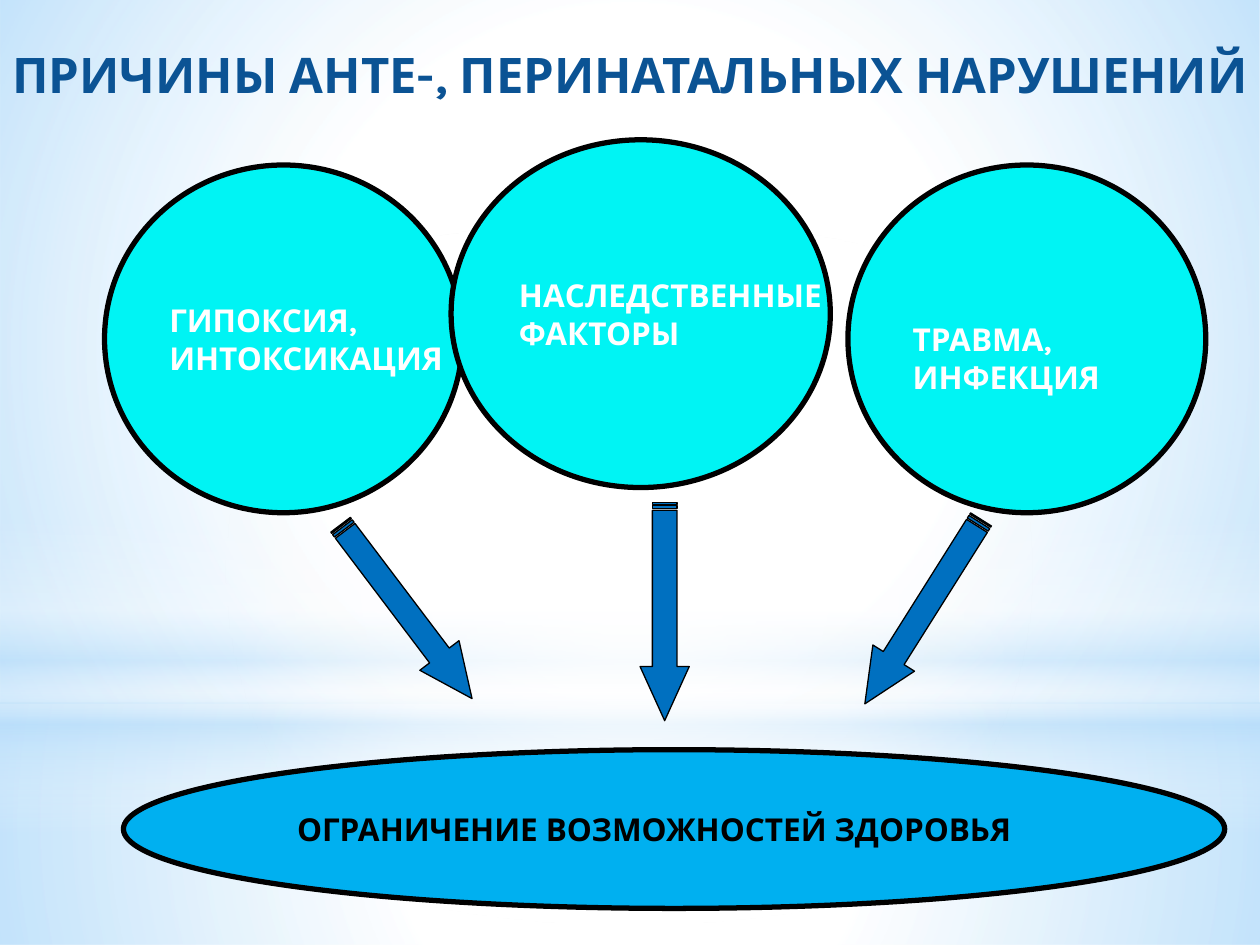
from lxml import etree
from pptx import Presentation
from pptx.dml.color import RGBColor
from pptx.enum.shapes import MSO_SHAPE as SHAPE
from pptx.enum.text import MSO_ANCHOR as ANCHOR, MSO_AUTO_SIZE as AUTO, PP_ALIGN as ALIGN
from pptx.oxml.ns import qn
from pptx.util import Inches, Pt

FONT = "Karla"
WHITE, SKY = "FFFFFF", "B4DCFA"
CYAN, AZURE, BLUE, NAVY, BLACK = "00F4F4", "00B0F0", "0070C0", "0B5394", "000000"

TITLE = "ПРИЧИНЫ АНТЕ-, ПЕРИНАТАЛЬНЫХ НАРУШЕНИЙ"
BACKDROP = [
    (SHAPE.RECTANGLE, (0, 5.58, 10, 1.92), True,
     [(0, WHITE, 91), (37, WHITE, 76), (100, SKY, 79)]),
    (SHAPE.RECTANGLE, (0, 0, 10, 5.58), True,
     [(0, WHITE, 89), (48, WHITE, 62), (100, SKY, 79)]),
    (SHAPE.RECTANGLE, (0, 4.12, 10, 2.5), False,
     [(0, WHITE, 0), (29, WHITE, 30), (45, SKY, 40), (55, WHITE, 26), (65, SKY, 60), (100, WHITE, 0)]),
    (SHAPE.OVAL, (0, 1.75, 10, 5.58), True, [(0, WHITE, 100), (56, WHITE, 0)]),
]
OVALS = [
    ("ГИПОКСИЯ,\nИНТОКСИКАЦИЯ", (0.83, 1.31, 2.84, 2.76), CYAN, WHITE, 0.05),
    ("НАСЛЕДСТВЕННЫЕ\nФАКТОРЫ", (3.58, 1.11, 3.01, 2.76), CYAN, WHITE, 0.05),
    ("ТРАВМА,\nИНФЕКЦИЯ", (6.73, 1.31, 2.84, 2.76), CYAN, WHITE, 0.35),
    ("ОГРАНИЧЕНИЕ ВОЗМОЖНОСТЕЙ ЗДОРОВЬЯ", (0.98, 5.95, 8.74, 1.26), AZURE, BLACK, 0.05),
]
ARROWS = [(2.36, 52.9), (6.46, 122.2), (4.41, 90)]
ARROW_TOP, ARROW_LENGTH, ARROW_WIDTH = 4.66, 1.73, 0.39


def rgb(color):
    return RGBColor.from_string(color)


def add_shape(s, kind, box, fill=None, line=None, width=0):
    sp = s.shapes.add_shape(kind, *map(Inches, box))
    sp.shadow.inherit = False
    if fill:
        sp.fill.solid()
        sp.fill.fore_color.rgb = rgb(fill)
    if line:
        sp.line.color.rgb = rgb(line)
        sp.line.width = Pt(width)
    else:
        sp.line.fill.background()
    return sp


def set_gradient(sp, stops, radial):
    grad = etree.Element(qn("a:gradFill"), rotWithShape="1")
    stop_list = etree.SubElement(grad, qn("a:gsLst"))
    for pos, color, alpha in stops:
        gs = etree.SubElement(stop_list, qn("a:gs"), pos=str(pos * 1000))
        clr = etree.SubElement(gs, qn("a:srgbClr"), val=color)
        etree.SubElement(clr, qn("a:alpha"), val=str(alpha * 1000))
    if radial:
        path = etree.SubElement(grad, qn("a:path"), path="circle")
        etree.SubElement(path, qn("a:fillToRect"), dict.fromkeys("ltrb", "50000"))
    else:
        etree.SubElement(grad, qn("a:lin"), ang="5400000", scaled="0")
    sp._element.spPr.find(qn("a:prstGeom")).addnext(grad)


def set_text(sp, text, size, color):
    tf = sp.text_frame
    tf.text = text
    tf.word_wrap = False
    for p in tf.paragraphs:
        p.alignment = ALIGN.LEFT
        for r in p.runs:
            r.font.name, r.font.size, r.font.bold = FONT, Pt(size), True
            r.font.color.rgb = rgb(color)
    return tf


def main():
    """Build the slide on causes of ante- and perinatal disorders."""
    prs = Presentation()
    prs.slide_width, prs.slide_height = Inches(10), Inches(7.5)
    s = prs.slides.add_slide(prs.slide_layouts[6])
    s.background.fill.solid()
    s.background.fill.fore_color.rgb = rgb(WHITE)

    for kind, box, radial, stops in BACKDROP:
        set_gradient(add_shape(s, kind, box), stops, radial)

    title = s.shapes.add_textbox(*map(Inches, (0, 0.3, 10.87, 0.59)))
    set_text(title, TITLE, 28, NAVY).auto_size = AUTO.SHAPE_TO_FIT_TEXT

    for text, box, fill, color, top in OVALS:
        tf = set_text(add_shape(s, SHAPE.OVAL, box, fill, BLACK, 3), text, 18, color)
        tf.vertical_anchor = ANCHOR.MIDDLE
        tf.margin_top = Inches(top)

    for left, angle in ARROWS:
        box = (left, ARROW_TOP, ARROW_LENGTH, ARROW_WIDTH)
        sp = add_shape(s, SHAPE.STRIPED_RIGHT_ARROW, box, BLUE, BLACK, 0.75)
        sp.rotation = angle
        sp.adjustments[0], sp.adjustments[1] = 0.5, 1.1

    prs.save("out.pptx")


if __name__ == "__main__":
    main()
